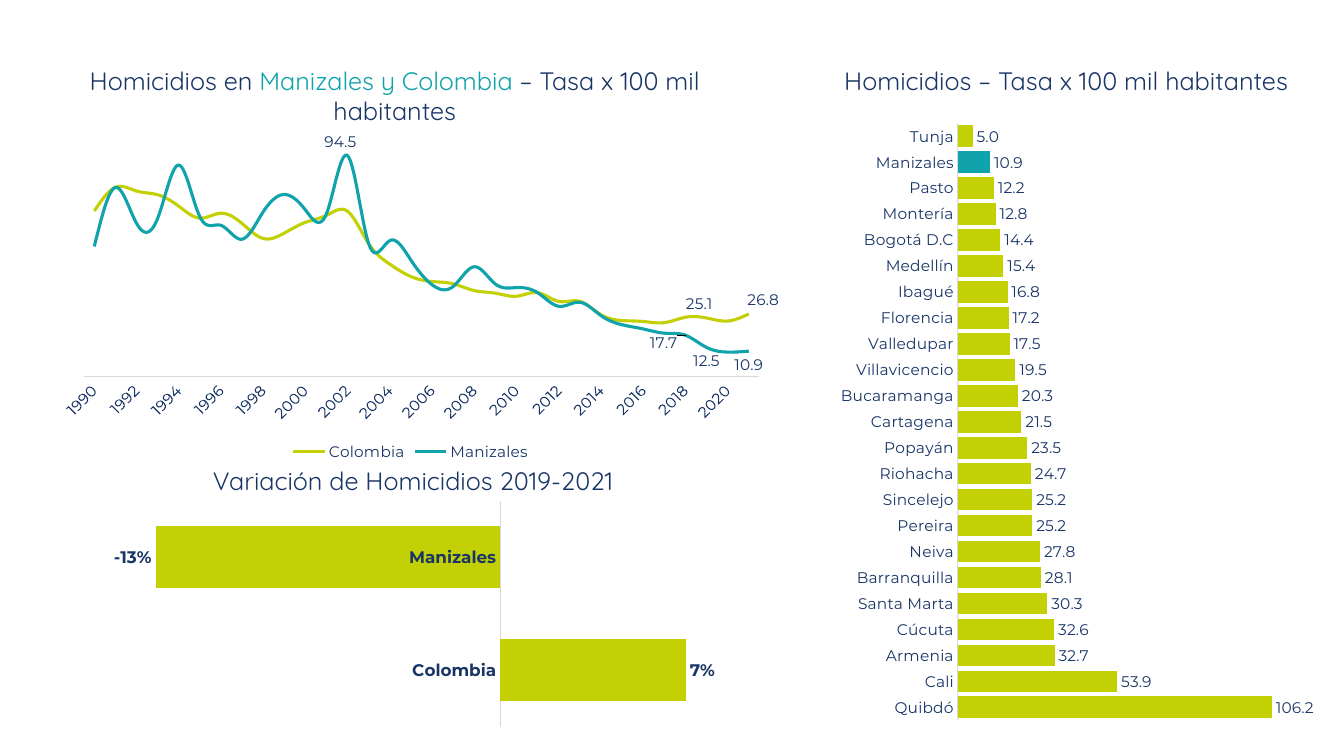
"""Build the slide on homicide rates in Manizales and Colombia."""
from dataclasses import dataclass

from lxml.etree import SubElement
from pptx import Presentation
from pptx.chart.chart import Chart
from pptx.chart.data import CategoryChartData
from pptx.dml.color import RGBColor
from pptx.enum.chart import XL_CHART_TYPE as ChartType
from pptx.enum.chart import XL_LABEL_POSITION as LabelPosition
from pptx.enum.chart import XL_LEGEND_POSITION as LegendPosition
from pptx.enum.chart import XL_TICK_MARK as TickMark
from pptx.enum.text import MSO_ANCHOR as Anchor
from pptx.enum.text import PP_ALIGN as Align
from pptx.oxml import parse_xml
from pptx.oxml.ns import nsdecls, qn
from pptx.util import Inches, Pt

WIDTH, HEIGHT = Inches(13.33), Inches(7.5)


@dataclass(frozen=True)
class Theme:
    navy: RGBColor = RGBColor(0x19, 0x35, 0x66)
    teal: RGBColor = RGBColor(0x10, 0xA3, 0xAB)
    lime: RGBColor = RGBColor(0xC3, 0xD0, 0x04)
    grey: RGBColor = RGBColor(0xD9, 0xD9, 0xD9)
    heading_font: str = "Quicksand"
    chart_font: str = "Montserrat"
    heading: int = 18
    label: int = 11
    strong: int = 12


THEME = Theme()


@dataclass(frozen=True)
class Area:
    """Position and size in percent of the slide."""
    left: float
    top: float
    width: float
    height: float

    def box(self) -> tuple[int, int, int, int]:
        return (int(WIDTH * self.left / 100), int(HEIGHT * self.top / 100),
                int(WIDTH * self.width / 100), int(HEIGHT * self.height / 100))


@dataclass(frozen=True)
class Heading:
    area: Area
    spans: tuple[tuple[str, RGBColor], ...]


@dataclass(frozen=True)
class Frame:
    """Slide area, inner plot as shares of the chart, and value range."""
    area: Area
    plot: tuple[float, float, float, float]
    low: float
    high: float


@dataclass(frozen=True)
class Bars:
    frame: Frame
    values: dict[str, float]
    gap: int
    size: int
    bold: bool
    number_format: str
    highlight: str = ""


@dataclass(frozen=True)
class Note:
    """Label of one year, shifted by shares of the chart."""
    year: int
    position: LabelPosition
    shift: tuple[float, float] = (0, 0)


@dataclass(frozen=True)
class Trend:
    name: str
    color: RGBColor
    values: tuple[float, ...]
    notes: tuple[Note, ...]


TITLE = Heading(Area(1.43, 8, 55.89, 9.47), (
    ("Homicidios en ", THEME.navy), ("Manizales y Colombia", THEME.teal),
    (" – Tasa x 100 mil habitantes", THEME.navy)))
HEADINGS = (
    Heading(Area(51.38, 8, 55.89, 5.33),
            (("Homicidios – Tasa x 100 mil habitantes", THEME.navy),)),
    Heading(Area(2.78, 60.93, 55.89, 5.33),
            (("Variación de Homicidios 2019-2021", THEME.navy),)),
)
CITIES = {
    "Quibdó": 106.2, "Cali": 53.9, "Armenia": 32.7, "Cúcuta": 32.6,
    "Santa Marta": 30.3, "Barranquilla": 28.1, "Neiva": 27.8, "Pereira": 25.2,
    "Sincelejo": 25.2, "Riohacha": 24.7, "Popayán": 23.5, "Cartagena": 21.5,
    "Bucaramanga": 20.3, "Villavicencio": 19.5, "Valledupar": 17.5,
    "Florencia": 17.2, "Ibagué": 16.8, "Medellín": 15.4, "Bogotá D.C": 14.4,
    "Montería": 12.8, "Pasto": 12.2, "Manizales": 10.9, "Tunja": 5.0,
}
BAR_CHARTS = (
    Bars(Frame(Area(61.73, 14.67, 36.68, 82.27), (0.26, 0.02, 0.72, 0.96), 0, 120),
         CITIES, 20, THEME.label, False, "#,##0.0", "Manizales"),
    Bars(Frame(Area(6.6, 65.6, 51.38, 31.2), (0.02, 0.02, 0.96, 0.96), -0.15, 0.1),
         {"Colombia": 0.07, "Manizales": -0.13}, 82, THEME.strong, True, "0%"),
)
YEARS = range(1990, 2022)
TREND_FRAME = Frame(Area(3.53, 17.47, 54.45, 44.13), (0.05, 0.02, 0.93, 0.71), 0, 100)
TRENDS = (
    Trend("Colombia", THEME.lime, (
        70.9, 81.0, 79.4, 77.8, 72.9, 67.8, 69.9, 65.5, 59.1, 61.4, 66.0,
        69.0, 70.7, 56.8, 48.1, 42.8, 40.7, 39.7, 36.8, 35.7, 34.4, 35.9,
        32.2, 32.2, 26.5, 24.0, 23.6, 23.1, 25.4, 25.1, 23.8, 26.8),
        (Note(2019, LabelPosition.ABOVE, (-0.01, 0)),
         Note(2021, LabelPosition.ABOVE, (0.02, 0)))),
    Trend("Manizales", THEME.teal, (
        55.7, 80.9, 65.6, 67.7, 90.5, 68.4, 64.7, 58.8, 70.5, 77.9, 71.3,
        69.8, 94.5, 56.8, 58.2, 49.8, 39.3, 38.6, 47.0, 39.6, 38.1, 35.9,
        30.1, 31.8, 26.1, 22.2, 20.4, 18.6, 17.7, 12.5, 10.5, 10.9),
        (Note(2002, LabelPosition.ABOVE, (-0.01, 0)),
         Note(2018, LabelPosition.BELOW, (-0.03, -0.02)),
         Note(2019, LabelPosition.BELOW), Note(2021, LabelPosition.BELOW))),
)


def style_font(font, size: int, color: RGBColor, name: str, bold: bool = False) -> None:
    font.size, font.name, font.bold = Pt(size), name, bold
    font.color.rgb = color


def write_heading(shape, heading: Heading) -> None:
    shape.left, shape.top, shape.width, shape.height = heading.area.box()
    frame = shape.text_frame
    frame.word_wrap, frame.vertical_anchor = True, Anchor.TOP
    para = frame.paragraphs[0]
    para.alignment = Align.CENTER
    para.line_spacing = 1.0
    for text, color in heading.spans:
        span = para.add_run()
        span.text = text
        style_font(span.font, THEME.heading, color, THEME.heading_font)


def manual_layout(values: dict[str, object]):
    """Return a c:layout element holding the given settings."""
    layout = parse_xml(f"<c:layout {nsdecls('c')}><c:manualLayout/></c:layout>")
    for name, value in values.items():
        SubElement(layout[0], qn(f"c:{name}")).set("val", str(value))
    return layout


def add_chart(page, kind: ChartType, data: CategoryChartData, frame: Frame,
              size: int, bold: bool = False) -> Chart:
    chart = page.shapes.add_chart(kind, *frame.area.box(), data).chart
    chart.has_title = chart.has_legend = False
    style_font(chart.font, size, THEME.navy, THEME.chart_font, bold)
    category, value = chart.category_axis, chart.value_axis
    category.major_tick_mark = category.minor_tick_mark = TickMark.NONE
    category.format.line.color.rgb = THEME.grey
    category.format.line.width = Pt(0.75)
    category.has_major_gridlines = value.has_major_gridlines = False
    value.visible = False
    value.minimum_scale, value.maximum_scale = frame.low, frame.high
    plot_area = chart._chartSpace.find(f".//{qn('c:plotArea')}")
    for old in plot_area.findall(qn("c:layout")):
        plot_area.remove(old)
    plot_area.insert(0, manual_layout(
        {"layoutTarget": "inner", "xMode": "edge", "yMode": "edge",
         **dict(zip("xywh", frame.plot))}))
    return chart


def draw_bars(page, bars: Bars) -> None:
    data = CategoryChartData(number_format=bars.number_format)
    data.categories = list(bars.values)
    data.add_series("Series 1", list(bars.values.values()))
    chart = add_chart(page, ChartType.BAR_CLUSTERED, data, bars.frame, bars.size, bars.bold)
    plot = chart.plots[0]
    plot.gap_width, plot.vary_by_categories = bars.gap, False
    series = plot.series[0]
    series.invert_if_negative = False
    for index, name in enumerate(bars.values):
        if name == bars.highlight:
            fill = series.points[index].format.fill
            fill.solid()
            fill.fore_color.rgb = THEME.teal
    series.format.fill.solid()
    series.format.fill.fore_color.rgb = THEME.lime
    labels = series.data_labels
    labels.show_value, labels.position = True, LabelPosition.OUTSIDE_END
    labels.number_format, labels.number_format_is_linked = bars.number_format, False
    style_font(labels.font, bars.size, THEME.navy, THEME.chart_font, bars.bold)


def draw_trends(page) -> None:
    data = CategoryChartData(number_format="0.0")
    data.categories = [str(year) for year in YEARS]
    for trend in TRENDS:
        data.add_series(trend.name, trend.values)
    chart = add_chart(page, ChartType.LINE, data, TREND_FRAME, THEME.label)
    chart.has_legend = True
    chart.legend.position, chart.legend.include_in_layout = LegendPosition.BOTTOM, False
    ticks = chart.category_axis.tick_labels
    style_font(ticks.font, THEME.label, THEME.navy, THEME.chart_font)
    chart.category_axis._element.find(f".//{qn('a:bodyPr')}").set("rot", "-2700000")
    for trend, series in zip(TRENDS, chart.plots[0].series):
        series.smooth = True
        series.format.line.color.rgb = trend.color
        series.format.line.width = Pt(2.25)
        series.data_labels.show_value = False
        for note in trend.notes:
            label = series.points[YEARS.index(note.year)].data_label
            label.position = note.position
            style_font(label.font, THEME.label, THEME.navy, THEME.chart_font)
            if any(note.shift):
                newest = series._element.findall(f".//{qn('c:dLbl')}")[-1]
                newest.insert(1, manual_layout(dict(zip("xy", note.shift))))


def main() -> None:
    deck = Presentation()
    deck.slide_width, deck.slide_height = WIDTH, HEIGHT
    page = deck.slides.add_slide(deck.slide_layouts[5])
    write_heading(page.shapes.title, TITLE)
    for heading in HEADINGS:
        write_heading(page.shapes.add_textbox(*heading.area.box()), heading)
    for bars in BAR_CHARTS:
        draw_bars(page, bars)
    draw_trends(page)
    deck.save("out.pptx")


if __name__ == "__main__":
    main()
